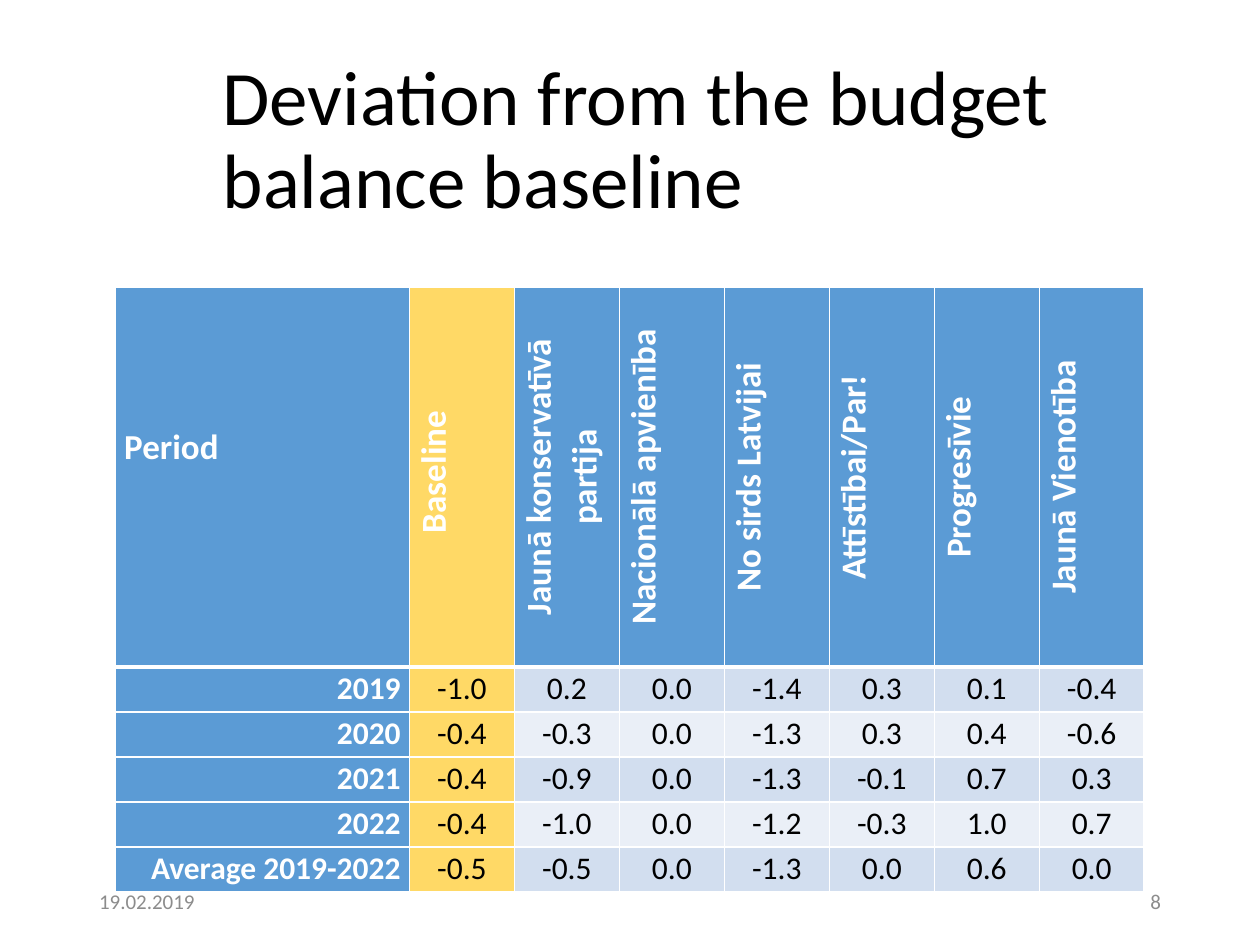
from lxml import etree
from pptx import Presentation
from pptx.dml.color import RGBColor
from pptx.enum import text
from pptx.oxml import ns
from pptx.util import Pt

# Content
TITLE = "Deviation from the budget balance baseline"
HEADS = ["Period", "Baseline", "Jaunā konservatīvā partija", "Nacionālā apvienība",
         "No sirds Latvijai", "Attīstībai/Par!", "Progresīvie", "Jaunā Vienotība"]
ROWS = [
    ("2019", -1.0, 0.2, 0.0, -1.4, 0.3, 0.1, -0.4),
    ("2020", -0.4, -0.3, 0.0, -1.3, 0.3, 0.4, -0.6),
    ("2021", -0.4, -0.9, 0.0, -1.3, -0.1, 0.7, 0.3),
    ("2022", -0.4, -1.0, 0.0, -1.2, -0.3, 1.0, 0.7),
    ("Average 2019-2022", -0.5, -0.5, 0.0, -1.3, 0.0, 0.6, 0.0),
]
LEFT, MID, RIGHT = text.PP_ALIGN.LEFT, text.PP_ALIGN.CENTER, text.PP_ALIGN.RIGHT
TOP, CORE = text.MSO_ANCHOR.TOP, text.MSO_ANCHOR.MIDDLE
FOOT = [("19.02.2019", 49.5, LEFT), ("8", 508.5, RIGHT)]

# Theme
THEME = {
    "font": "Calibri", "ink": "000000", "white": "FFFFFF", "grey": "8C8C8C",
    "blue": "5B9BD5", "gold": "FFD966", "bands": ("D2DEEF", "EAEFF7"),
    "title": 44, "head": 20, "body": 18, "foot": 12,
}

# Table grid, in points
X, Y = 66, 164
WIDE, COL = 168, 60
HEAD, ROW = 215.5, 25.7
DROP = 78  # space above "Period"


def place(shape, x, y, w, h):
    box = {"left": x, "top": y, "width": w, "height": h}
    for key, val in box.items():
        setattr(shape, key, Pt(val))


def write(para, words, size, color, bold=False, align=LEFT, line=None):
    for key, val in {"alignment": align, "line_spacing": line}.items():
        setattr(para, key, val)
    run = para.add_run()
    run.text = words
    look = {"name": THEME["font"], "size": Pt(size), "bold": bold}
    for key, val in look.items():
        setattr(run.font, key, val)
    run.font.color.rgb = RGBColor.from_string(color)


def edge(cell, side, width):
    line = etree.SubElement(cell._tc.get_or_add_tcPr(), ns.qn(f"a:ln{side}"),
                            w=str(Pt(width)))
    fill = etree.SubElement(line, ns.qn("a:solidFill"))
    etree.SubElement(fill, ns.qn("a:srgbClr"), val=THEME["white"])


def dress(cell, row, col):
    # White rules, heavier under the header
    for side in "LRTB":
        heavy = (row == 0 and side == "B") or (row == 1 and side == "T")
        edge(cell, side, 3 if heavy else 1)
    if col == 1:
        color = THEME["gold"]
    elif row == 0 or col == 0:
        color = THEME["blue"]
    else:
        color = THEME["bands"][(row - 1) % 2]
    cell.fill.solid()
    cell.fill.fore_color.rgb = RGBColor.from_string(color)
    pads = {"margin_left": 5, "margin_right": 5, "margin_top": 0, "margin_bottom": 0}
    for key, val in pads.items():
        setattr(cell, key, Pt(val))


def fill_cell(cell, row, col, item):
    dress(cell, row, col)
    head, label = row == 0, col == 0
    para = cell.text_frame.paragraphs[0]
    if head and label:
        cell.margin_top = Pt(DROP)
    elif head:
        cell._tc.get_or_add_tcPr().set("vert", "vert270")
        cell.vertical_anchor = TOP if col == len(HEADS) - 1 else CORE
        if col == 1:
            para._p.get_or_add_pPr().set("marL", str(Pt(6)))
    words = item if isinstance(item, str) else f"{item:.1f}"
    align = (LEFT if head else RIGHT) if label else MID
    strong = head or label
    write(para, words, THEME["head" if head else "body"],
          THEME["white" if strong else "ink"], strong, align, 1.07)


def main():
    deck = Presentation()
    deck.slide_width, deck.slide_height = Pt(720), Pt(540)
    slide = deck.slides.add_slide(deck.slide_layouts[5])

    # Title
    title = slide.shapes.title
    place(title, 120, 28.75, 550, 104.4)
    frame = title.text_frame
    frame.auto_size = text.MSO_AUTO_SIZE.NONE
    frame.vertical_anchor = CORE
    write(frame.paragraphs[0], TITLE, THEME["title"], THEME["ink"], line=0.9)

    # Table
    count = len(HEADS)
    table = slide.shapes.add_table(
        len(ROWS) + 1, count, Pt(X), Pt(Y),
        Pt(WIDE + COL * (count - 1)), Pt(HEAD + ROW * len(ROWS))).table
    for i, col in enumerate(table.columns):
        col.width = Pt(COL if i else WIDE)
    for r, items in enumerate([HEADS] + ROWS):
        table.rows[r].height = Pt(ROW if r else HEAD)
        for c, item in enumerate(items):
            fill_cell(table.cell(r, c), r, c, item)

    # Date and page number
    for words, x, align in FOOT:
        box = slide.shapes.add_textbox(Pt(x), Pt(500.5), Pt(162), Pt(28.75))
        frame = box.text_frame
        frame.word_wrap = True
        frame.vertical_anchor = CORE
        write(frame.paragraphs[0], words, THEME["foot"], THEME["grey"], align=align)

    deck.save("out.pptx")


if __name__ == "__main__":
    main()
